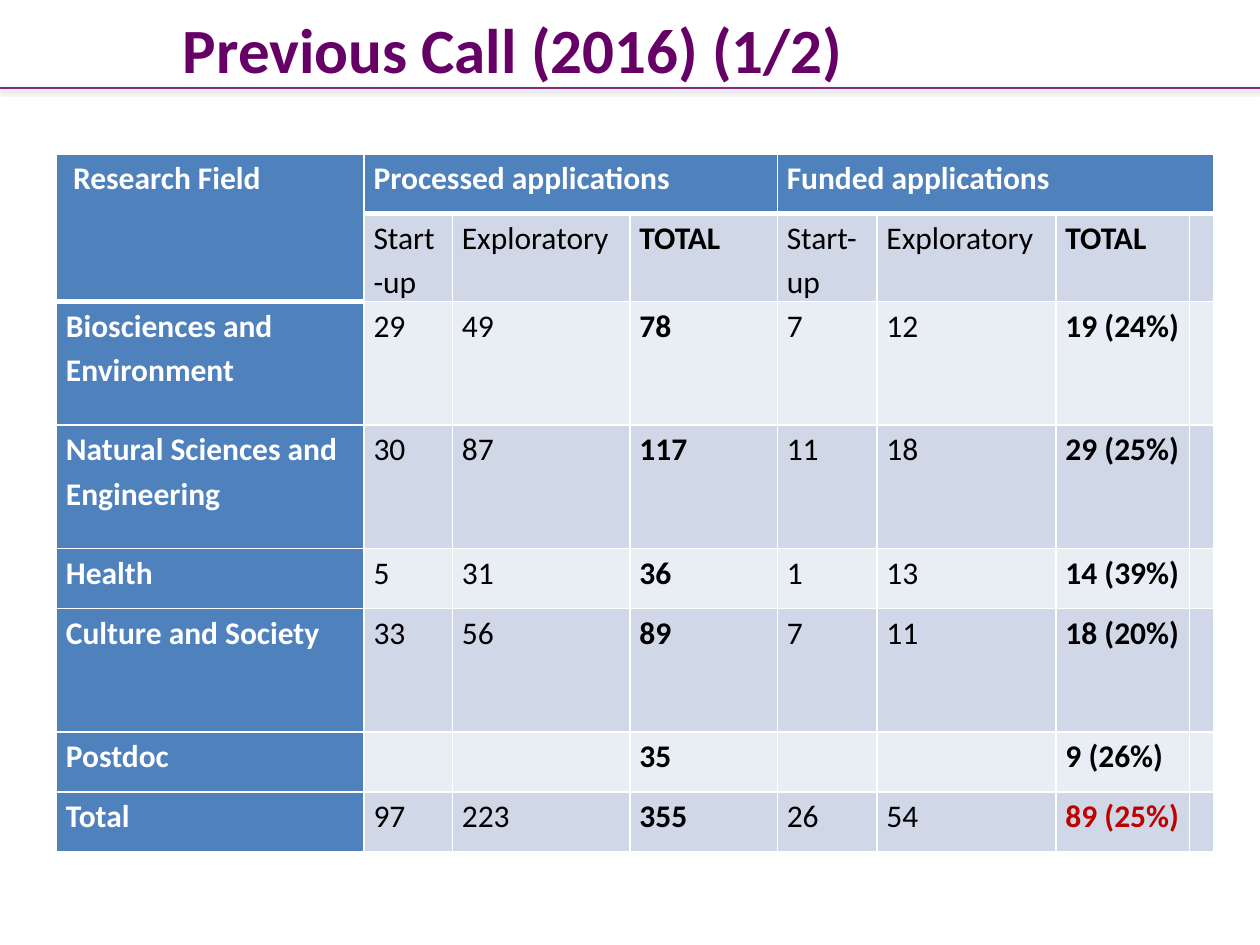
import pptx
import pptx.util
import pptx.dml.color
import pptx.enum.shapes
import pptx.enum.text
import pptx.oxml
import pptx.oxml.ns
from lxml import etree

Cm = pptx.util.Cm
Pt = pptx.util.Pt
qn = pptx.oxml.ns.qn

# Colours and type sizes
THEME = {
    "font": "Calibri", "title": 36, "body": 18,
    "plum": "660066", "rule": "832B7C", "head": "4F81BD",
    "bands": ("E9EDF4", "D0D8E8"), "white": "FFFFFF",
    "black": "000000", "red": "C00000",
}

# Table content; None marks a cell covered by a merge
COLS = (6.2, 1.78, 3.58, 2.97, 2.01, 3.61, 2.69, 0.25)
ROWS = (1.21, 1.77, 2.49, 2.49, 1.21, 2.49, 1.21, 1.21)
DATA = (
    (" Research Field", "Processed applications", None, None,
     "Funded applications", None, None, None),
    (None, "Start-up", "Exploratory", "TOTAL",
     "Start-up", "Exploratory", "TOTAL", ""),
    ("Biosciences and Environment", "29", "49", "78", "7", "12", "19 (24%)", ""),
    ("Natural Sciences and Engineering",
     "30", "87", "117", "11", "18", "29 (25%)", ""),
    ("Health", "5", "31", "36", "1", "13", "14 (39%)", ""),
    ("Culture and Society", "33", "56", "89", "7", "11", "18 (20%)", ""),
    ("Postdoc", "", "", "35", "", "", "9 (26%)", ""),
    ("Total", "97", "223", "355", "26", "54", "89 (25%)", ""),
)
MERGES = (((0, 0), (1, 0)), ((0, 1), (0, 3)), ((0, 4), (0, 7)))
BOLD = (0, 3, 6)


def rgb(code):
    return pptx.dml.color.RGBColor.from_string(code)


def put(obj, **vals):
    for name, val in vals.items():
        setattr(obj, name, val)


class Deck:
    def __init__(self, theme):
        self.theme = theme
        self.file = pptx.Presentation()
        put(self.file, slide_width=Cm(25.4), slide_height=Cm(19.05))
        self.slide = self.file.slides.add_slide(self.file.slide_layouts[6])

    def font(self, font, size, color, bold):
        put(font, name=self.theme["font"], size=Pt(size), bold=bold)
        font.color.rgb = rgb(color)

    def rule(self, top):
        kind = pptx.enum.shapes.MSO_CONNECTOR.STRAIGHT
        line = self.slide.shapes.add_connector(
            kind, 0, Cm(top), self.file.slide_width, Cm(top))
        line.line.color.rgb = rgb(self.theme["rule"])
        line.line.width = Pt(1)
        # Soft shadow below the line
        glow = etree.SubElement(line._element.spPr, qn("a:effectLst"))
        cast = etree.SubElement(glow, qn("a:outerShdw"), blurRad="40000",
                                dist="12700", dir="5400000", rotWithShape="0")
        tint = etree.SubElement(cast, qn("a:srgbClr"), val=self.theme["black"])
        etree.SubElement(tint, qn("a:alpha"), val="25000")

    def title(self, text, *box):
        frame = self.slide.shapes.add_textbox(*map(Cm, box)).text_frame
        put(frame, word_wrap=True, text=text,
            vertical_anchor=pptx.enum.text.MSO_ANCHOR.MIDDLE)
        par = frame.paragraphs[0]
        par.alignment = pptx.enum.text.PP_ALIGN.CENTER
        self.font(par.runs[0].font, self.theme["title"],
                  self.theme["plum"], True)

    def edge(self, cell, side, width):
        props = cell._tc.get_or_add_tcPr()
        line = etree.SubElement(props, qn("a:ln" + side), w=str(Pt(width)))
        fill = etree.SubElement(line, qn("a:solidFill"))
        etree.SubElement(fill, qn("a:srgbClr"), val=self.theme["white"])

    def cell(self, cell, row, col, text):
        look = self.theme
        head = row == 0 or col == 0
        put(cell, margin_left=Cm(0.19), margin_right=Cm(0.19),
            margin_top=0, margin_bottom=0)
        # Thick edge under the header cells
        last = 1 if col == 0 else 0
        wide = {"T": row == last + 1, "B": row <= last}
        for side in "LRTB":
            self.edge(cell, side, 3 if wide.get(side) else 1)
        cell.fill.solid()
        cell.fill.fore_color.rgb = rgb(
            look["head"] if head else look["bands"][row % 2])
        par = cell.text_frame.paragraphs[0]
        par.line_spacing = 1.15
        if text:
            par.text = text
            final = row == len(DATA) - 1 and col == 6
            color = "white" if head else "red" if final else "black"
            self.font(par.runs[0].font, look["body"], look[color],
                      head or col in BOLD)

    def table(self, left, top):
        grid = self.slide.shapes.add_table(
            len(ROWS), len(COLS), Cm(left), Cm(top),
            Cm(sum(COLS)), Cm(sum(ROWS))).table
        put(grid, first_row=False, horz_banding=False)
        for col, size in zip(grid.columns, COLS):
            col.width = Cm(size)
        for row, size in zip(grid.rows, ROWS):
            row.height = Cm(size)
        for row, line in enumerate(DATA):
            for col, text in enumerate(line):
                self.cell(grid.cell(row, col), row, col, text)
        for start, end in MERGES:
            grid.cell(*start).merge(grid.cell(*end))


def main():
    deck = Deck(THEME)
    # Heading
    deck.rule(1.78)
    deck.title("Previous Call (2016) (1/2)", -1.09, 0, 22.86, 1.93)
    # Results by field
    deck.table(1.14, 3.1)
    deck.file.save("out.pptx")


if __name__ == "__main__":
    main()
